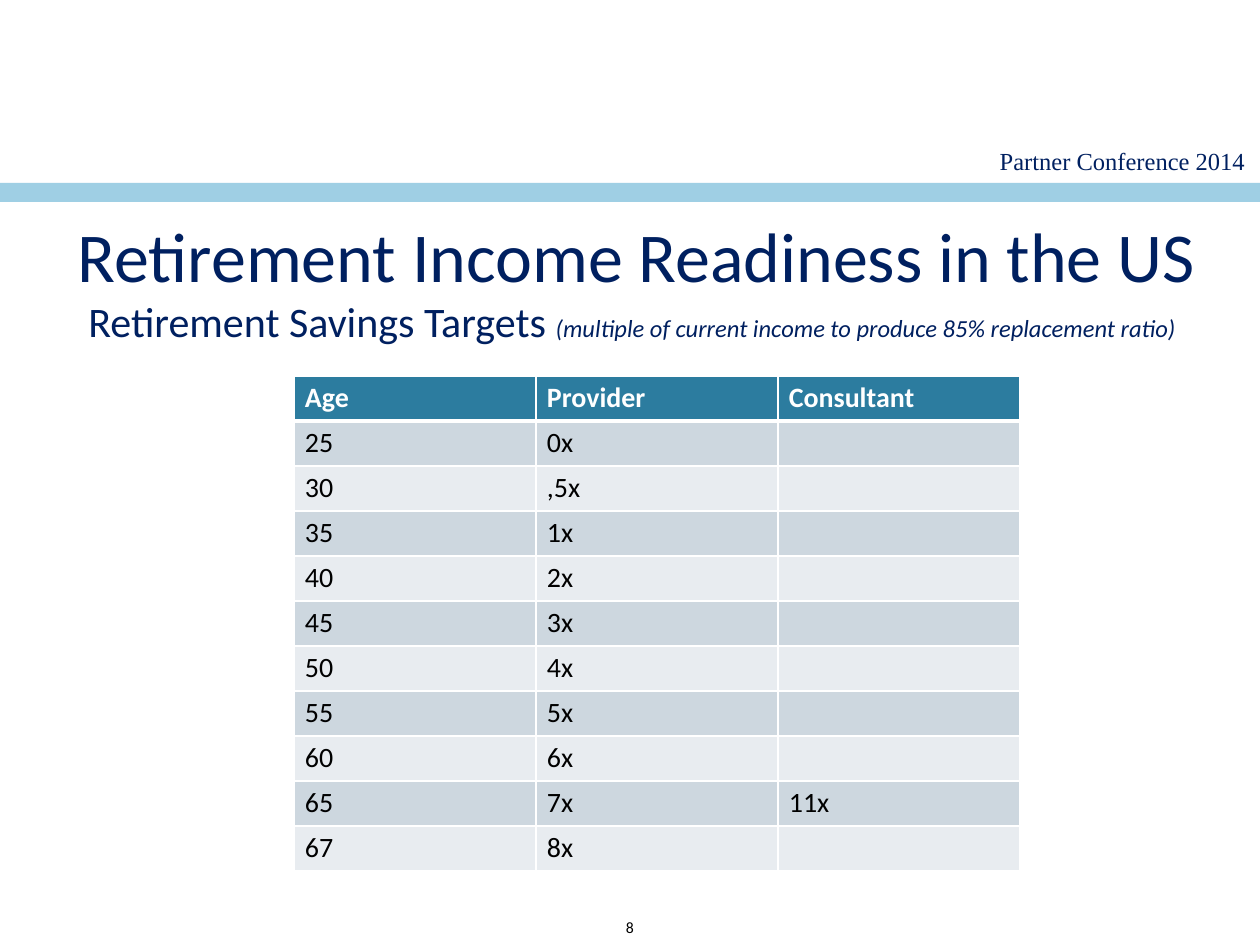
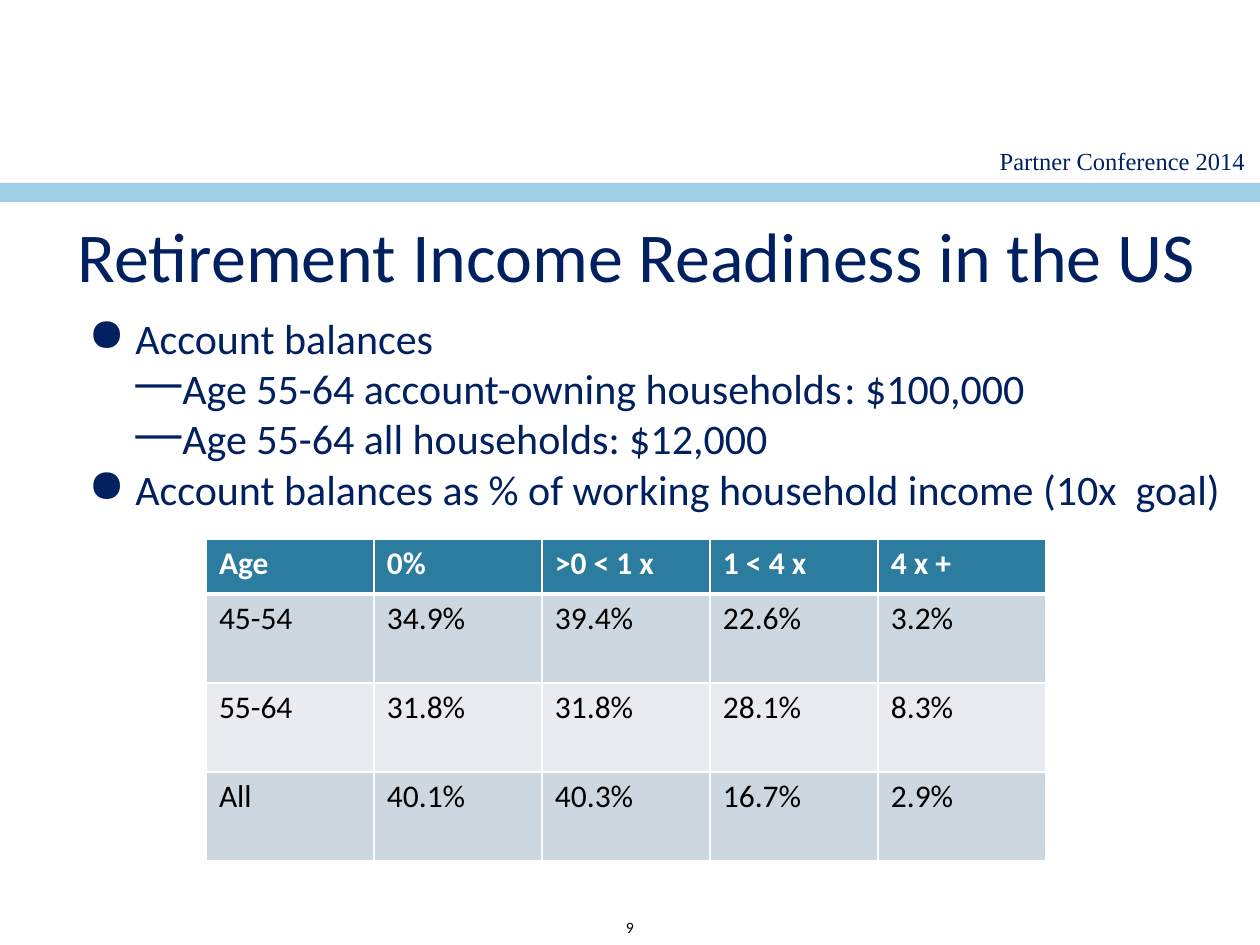
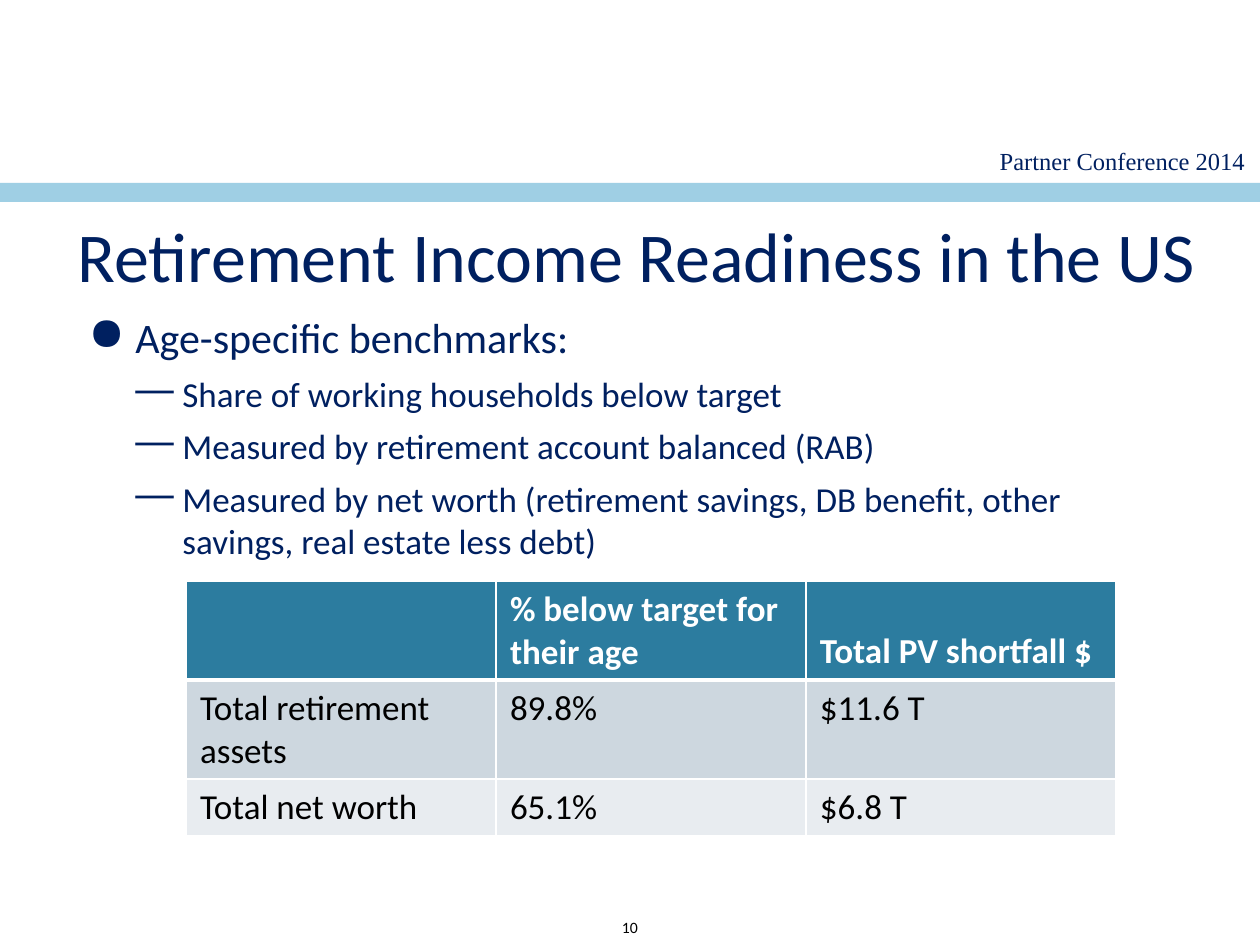
from lxml.etree import SubElement
from pptx import Presentation
from pptx.dml.color import RGBColor
from pptx.enum.shapes import MSO_SHAPE
from pptx.enum.text import MSO_ANCHOR, PP_ALIGN
from pptx.oxml.ns import qn
from pptx.util import Emu, Pt

PX_PER_INCH = 126
SLIDE_W, SLIDE_H = 1260, 945

NAVY = RGBColor(0x00, 0x20, 0x60)
SKY = RGBColor(0x9F, 0xCF, 0xE4)
TEAL = RGBColor(0x2C, 0x7C, 0x9F)
BAND_DARK = RGBColor(0xCD, 0xD7, 0xDF)
BAND_LIGHT = RGBColor(0xE8, 0xEC, 0xF0)
WHITE = RGBColor(0xFF, 0xFF, 0xFF)
BLACK = RGBColor(0x00, 0x00, 0x00)

BODY_FONT = "Calibri"
HEADER_FONT = "Times New Roman"
TITLE = "Retirement Income Readiness in the US"
BULLETS = ("●", "—")
HANGING = 47

SAVINGS_TARGETS = [
    ("Age", "Provider", "Consultant"),
    ("25", "0x", ""),
    ("30", ",5x", ""),
    ("35", "1x", ""),
    ("40", "2x", ""),
    ("45", "3x", ""),
    ("50", "4x", ""),
    ("55", "5x", ""),
    ("60", "6x", ""),
    ("65", "7x", "11x"),
    ("67", "8x", ""),
]
BALANCES_BY_AGE = [
    ("Age", "0%", ">0 < 1 x", "1 < 4 x", "4 x +"),
    ("45-54", "34.9%", "39.4%", "22.6%", "3.2%"),
    ("55-64", "31.8%", "31.8%", "28.1%", "8.3%"),
    ("All", "40.1%", "40.3%", "16.7%", "2.9%"),
]
SHORTFALLS = [
    ("", "% below target for their age", "Total PV shortfall $"),
    ("Total retirement assets", "89.8%", "$11.6 T"),
    ("Total net worth", "65.1%", "$6.8 T"),
]


def px(length):
    return Emu(round(length * 914400 / PX_PER_INCH))


def add_run(paragraph, text, size, color=NAVY, font=BODY_FONT, bold=False, italic=False):
    run = paragraph.add_run()
    run.text = text
    run.font.size = Pt(size)
    run.font.name = font
    run.font.color.rgb = color
    run.font.bold = bold
    run.font.italic = italic


def add_frame(slide, left, top, width, height, anchor=MSO_ANCHOR.TOP):
    """Add a wrapping text box and return its text frame."""
    frame = slide.shapes.add_textbox(px(left), px(top), px(width), px(height)).text_frame
    frame.word_wrap = True
    frame.vertical_anchor = anchor
    return frame


def add_centred_line(slide, box, text, size, anchor=MSO_ANCHOR.TOP, **style):
    paragraph = add_frame(slide, *box, anchor).paragraphs[0]
    paragraph.alignment = PP_ALIGN.CENTER
    add_run(paragraph, text, size, **style)


def add_page(deck, number):
    """Add a slide with the header, band, title and page number."""
    slide = deck.slides.add_slide(deck.slide_layouts[6])
    add_centred_line(slide, (953, 140, 339, 43), "Partner Conference 2014", 14, font=HEADER_FONT)
    band = slide.shapes.add_shape(MSO_SHAPE.RECTANGLE, 0, px(183), px(SLIDE_W), px(19))
    band.shadow.inherit = False
    band.fill.solid()
    band.fill.fore_color.rgb = SKY
    band.line.fill.background()
    add_centred_line(slide, (0, 912, SLIDE_W, 32), str(number), 9, color=BLACK)
    add_centred_line(slide, (26, 186, 1221, 117), TITLE, 40, MSO_ANCHOR.BOTTOM)
    return slide


def set_bullet(paragraph, level):
    paragraph.level = level
    props = paragraph._p.get_or_add_pPr()
    props.set("marL", str(px(HANGING * (level + 1))))
    props.set("indent", str(-px(HANGING)))
    color = SubElement(props, qn("a:buClr"))
    SubElement(color, qn("a:srgbClr"), val=str(NAVY))
    SubElement(props, qn("a:buSzPct"), val="110000")
    SubElement(props, qn("a:buChar"), char=BULLETS[level])


def add_bullets(slide, box, items, sizes=(24, 24), space_before=0):
    """Add (level, text) items; sizes holds one text size per level."""
    frame = add_frame(slide, *box)
    for index, (level, text) in enumerate(items):
        paragraph = frame.add_paragraph() if index else frame.paragraphs[0]
        set_bullet(paragraph, level)
        if index and space_before:
            paragraph.space_before = Pt(space_before)
        add_run(paragraph, text, sizes[level])


def set_borders(cell, row):
    """Draw white borders, thick between the header and the first row."""
    widths = {"L": 1, "R": 1, "T": 3 if row == 1 else 1, "B": 3 if row == 0 else 1}
    props = cell._tc.get_or_add_tcPr()
    for side, width in widths.items():
        line = SubElement(props, qn(f"a:ln{side}"), w=str(Pt(width)))
        fill = SubElement(line, qn("a:solidFill"))
        SubElement(fill, qn("a:srgbClr"), val=str(WHITE))


def fill_cell(cell, row, text, size, margins):
    cell.margin_left = cell.margin_right = px(margins[0])
    cell.margin_top = cell.margin_bottom = px(margins[1])
    set_borders(cell, row)
    cell.fill.solid()
    is_header = row == 0
    cell.fill.fore_color.rgb = TEAL if is_header else BAND_DARK if row % 2 else BAND_LIGHT
    paragraph = cell.text_frame.paragraphs[0]
    if text:
        add_run(paragraph, text, size, WHITE if is_header else BLACK, bold=is_header)
    else:
        SubElement(paragraph._p, qn("a:endParaRPr"), sz=str(size * 100))


def add_grid(slide, left, top, col_width, row_heights, rows, size, margins,
             header_anchor=MSO_ANCHOR.TOP):
    col_count = len(rows[0])
    table = slide.shapes.add_table(
        len(rows), col_count, px(left), px(top),
        px(col_width * col_count), px(sum(row_heights))).table
    table.horz_banding = False
    for column in table.columns:
        column.width = px(col_width)
    for row, (height, texts) in enumerate(zip(row_heights, rows)):
        table.rows[row].height = px(height)
        for col, text in enumerate(texts):
            fill_cell(table.cell(row, col), row, text, size, margins)
    for col in range(col_count):
        table.cell(0, col).vertical_anchor = header_anchor


def add_targets_page(deck):
    slide = add_page(deck, 8)
    subtitle = add_frame(slide, 76, 289, 1145, 96).paragraphs[0]
    add_run(subtitle, "Retirement Savings Targets ", 24)
    add_run(subtitle, "(multiple of current income to produce 85% replacement ratio)",
            14, italic=True)
    add_grid(slide, 294, 376, 242, [45] * len(SAVINGS_TARGETS), SAVINGS_TARGETS, 16, (11, 5))


def add_balances_page(deck):
    slide = add_page(deck, 9)
    add_bullets(slide, (76, 306, 1172, 241), [
        (0, "Account balances"),
        (1, "Age 55-64 account-owning households\t: $100,000"),
        (1, "Age 55-64 all households: $12,000"),
        (0, "Account balances as % of working household income (10x  goal)"),
    ])
    add_grid(slide, 206, 539, 168, [55, 89, 89, 89], BALANCES_BY_AGE, 18, (13, 6))


def add_benchmarks_page(deck):
    slide = add_page(deck, 10)
    add_bullets(slide, (76, 305, 1109, 616), [
        (0, "Age-specific benchmarks:"),
        (1, "Share of working households below target"),
        (1, "Measured by retirement account balanced (RAB)"),
        (1, "Measured by net worth (retirement savings, DB benefit, other savings, "
            "real estate less debt)"),
    ], sizes=(24, 20), space_before=6)
    add_grid(slide, 186, 581, 310, [99, 99, 57], SHORTFALLS, 20, (14, 7), MSO_ANCHOR.BOTTOM)


def main():
    deck = Presentation()
    deck.slide_width, deck.slide_height = px(SLIDE_W), px(SLIDE_H)
    add_targets_page(deck)
    add_balances_page(deck)
    add_benchmarks_page(deck)
    deck.save("out.pptx")


if __name__ == "__main__":
    main()
